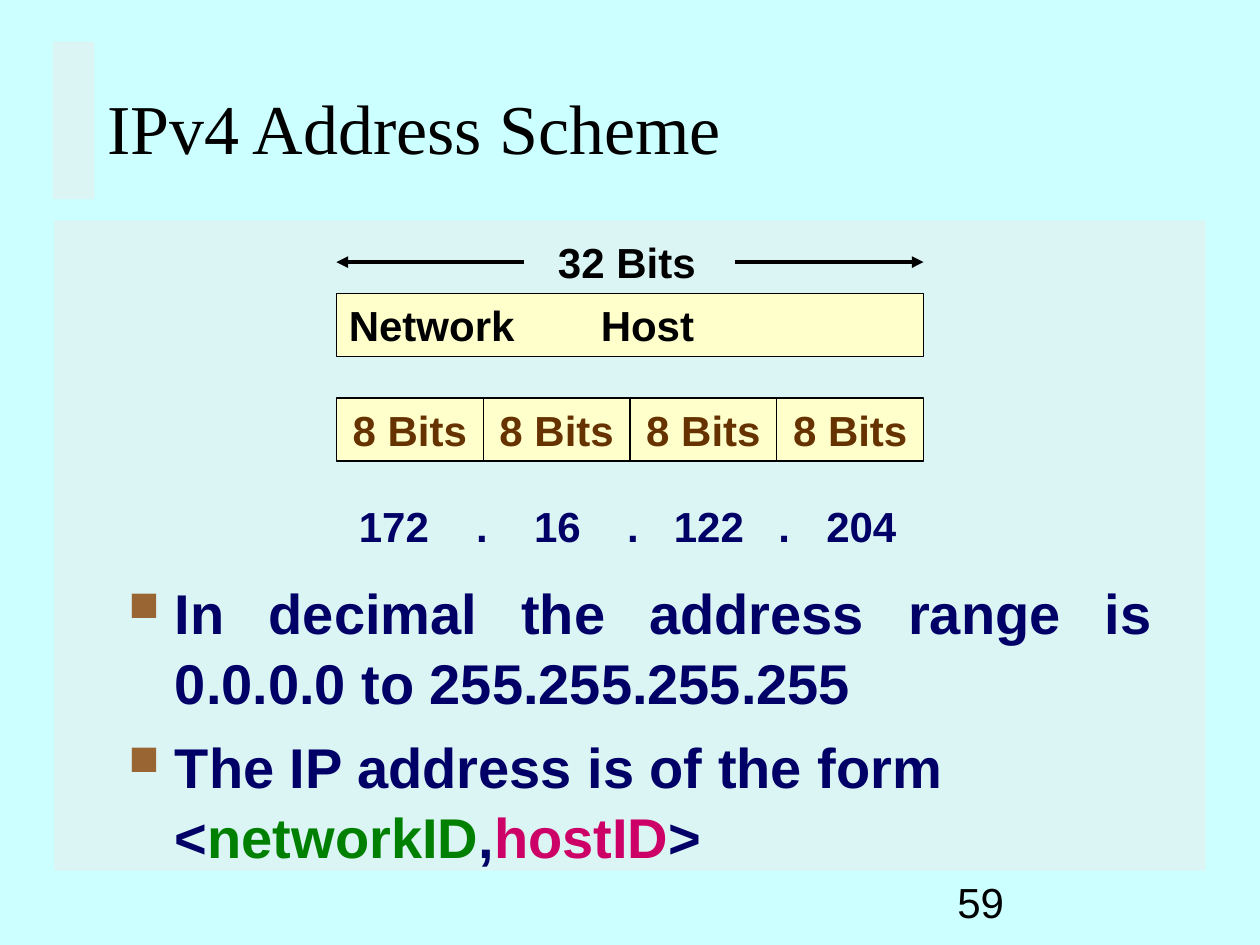
from lxml import etree
from pptx import Presentation
from pptx.dml.color import RGBColor
from pptx.enum.shapes import MSO_CONNECTOR, MSO_SHAPE
from pptx.enum.text import MSO_ANCHOR, PP_ALIGN
from pptx.oxml.ns import qn
from pptx.util import Inches, Pt

RECT, LINE = MSO_SHAPE.RECTANGLE, MSO_CONNECTOR.STRAIGHT
TOP, MIDDLE = MSO_ANCHOR.TOP, MSO_ANCHOR.MIDDLE
LEFT, CENTER, JUSTIFY = PP_ALIGN.LEFT, PP_ALIGN.CENTER, PP_ALIGN.JUSTIFY
WIDE, HIGH = 10, 7.5
BLACK, NAVY, BROWN, CREAM = "000000", "000066", "663300", "FFFFCC"
GRID_X, CELL_W, CELL_H = 2.67, 1.165, 0.5
COUNT = 4
GRID_W = COUNT * CELL_W
BASE = {"name": "Arial", "size": Pt(24), "bold": True}
PLAIN = {**BASE, "bold": False}
BIG = {**BASE, "size": Pt(32)}
HEAD = {"name": "Times New Roman", "size": Pt(40), "bold": False}


def tint(hexa):
    """Turn a hex string into a colour."""
    return RGBColor.from_string(hexa)


def node(parent, tag, **attrs):
    """Append a drawing element with its attributes."""
    item = etree.SubElement(parent, qn(tag))
    for key, value in attrs.items():
        item.set(key, str(value))
    return item


def write(para, runs, form, align=LEFT):
    """Add coloured runs in one format."""
    para.alignment = align
    for text, hexa in runs:
        run = para.add_run()
        run.text = text
        for key, value in form.items():
            setattr(run.font, key, value)
        run.font.color.rgb = tint(hexa)


def stops(para, places):
    """Set left tab stops, in inches."""
    tabs = node(para._p.get_or_add_pPr(), "a:tabLst")
    for place in places:
        node(tabs, "a:tab", pos=Inches(place), algn="l")


def frame(shape, anchor=TOP):
    """Prepare the text frame of a shape."""
    body = shape.text_frame
    body.word_wrap = True
    body.vertical_anchor = anchor
    return body


def label(slide, box, text, hexa, form=BASE, anchor=TOP, tabs=()):
    """Add a one-line text box."""
    shape = slide.shapes.add_textbox(*map(Inches, box))
    para = frame(shape, anchor).paragraphs[0]
    stops(para, tabs)
    write(para, [(text, hexa)], form)


def block(slide, box, hexa):
    """Add a plain filled rectangle."""
    shape = slide.shapes.add_shape(RECT, *map(Inches, box))
    shape.shadow.inherit = False
    shape.fill.solid()
    shape.fill.fore_color.rgb = tint(hexa)
    shape.line.fill.background()
    return shape


def panel(slide, box):
    """Add a half-clear grey panel."""
    shape = block(slide, box, "EAEAEA")
    fill = shape._element.spPr.find(qn("a:solidFill"))
    node(fill[0], "a:alpha", val=50000)


def field(slide, box, text, hexa, align=LEFT, tabs=()):
    """Add an outlined address field."""
    shape = block(slide, box, CREAM)
    shape.line.color.rgb = tint(BLACK)
    shape.line.width = Pt(0.75)
    para = frame(shape).paragraphs[0]
    stops(para, tabs)
    write(para, [(text, hexa)], BASE, align)


def arrow(slide, start, end, y):
    """Add a level arrow that points to its end."""
    ends = map(Inches, (start, y, end, y))
    line = slide.shapes.add_connector(LINE, *ends)
    line.line.color.rgb = tint(BLACK)
    line.line.width = Pt(2.25)
    node(line.line._get_or_add_ln(), "a:tailEnd", type="triangle")
    node(line._element.spPr, "a:effectLst")


def points(slide, box, items):
    """Add a list with square bullets."""
    body = frame(slide.shapes.add_textbox(*map(Inches, box)))
    for index, (runs, align) in enumerate(items):
        para = body.add_paragraph() if index else body.paragraphs[0]
        para.line_spacing = 1.04
        para.space_before = Pt(8 if index else 0)
        props = para._p.get_or_add_pPr()
        props.set("marL", str(Inches(0.37)))
        props.set("indent", str(Inches(-0.37)))
        node(node(props, "a:buClr"), "a:srgbClr", val="996633")
        node(props, "a:buSzPct", val=75000)
        node(props, "a:buChar", char="■")
        write(para, runs, BIG, align)


def title(slide, box, text):
    """Move and fill the title placeholder."""
    shape = slide.shapes.title
    shape.left, shape.top, shape.width, shape.height = map(Inches, box)
    write(frame(shape, MIDDLE).paragraphs[0], [(text, BLACK)], HEAD)


def main():
    """Build the slide and save it."""
    deck = Presentation()
    deck.slide_width, deck.slide_height = Inches(WIDE), Inches(HIGH)
    slide = deck.slides.add_slide(deck.slide_layouts[5])
    slide.background.fill.solid()
    slide.background.fill.fore_color.rgb = tint("CCFFFF")

    panel(slide, (0.43, 1.75, 9.14, 5.16))
    panel(slide, (0.42, 0.33, 0.33, 1.25))
    title(slide, (0.75, 0.42, 8.5, 1.17), "IPv4 Address Scheme")
    label(slide, (7.5, 6.91, 2.08, 0.5), "59", BLACK, PLAIN, MIDDLE)

    points(slide, (0.92, 4.52, 8.33, 2.32), [
        ([("In decimal the address range is 0.0.0.0 to 255.255.255.255",
           NAVY)], JUSTIFY),
        ([("The IP address is of the form <", NAVY), ("networkID", "008000"),
          (",", NAVY), ("hostID", "CC0066"), (">", NAVY)], LEFT),
    ])

    for col in range(COUNT):
        box = (GRID_X + col * CELL_W, 3.16, CELL_W, CELL_H)
        field(slide, box, "8 Bits", BROWN, CENTER)
    field(slide, (GRID_X, 2.33, GRID_W, CELL_H), "Network\tHost", BLACK,
          tabs=[2])
    label(slide, (4.33, 1.83, 1.41, CELL_H), "32 Bits", BLACK)
    arrow(slide, 4.16, GRID_X, 2.08)
    arrow(slide, 5.83, GRID_X + GRID_W, 2.08)
    label(slide, (2.75, 3.92, GRID_W, CELL_H),
          "172\t.\t16\t.\t122\t.\t204", NAVY,
          tabs=[0.93, 1.39, 2.13, 2.5, 3.33, 3.71])
    deck.save("out.pptx")


if __name__ == "__main__":
    main()
